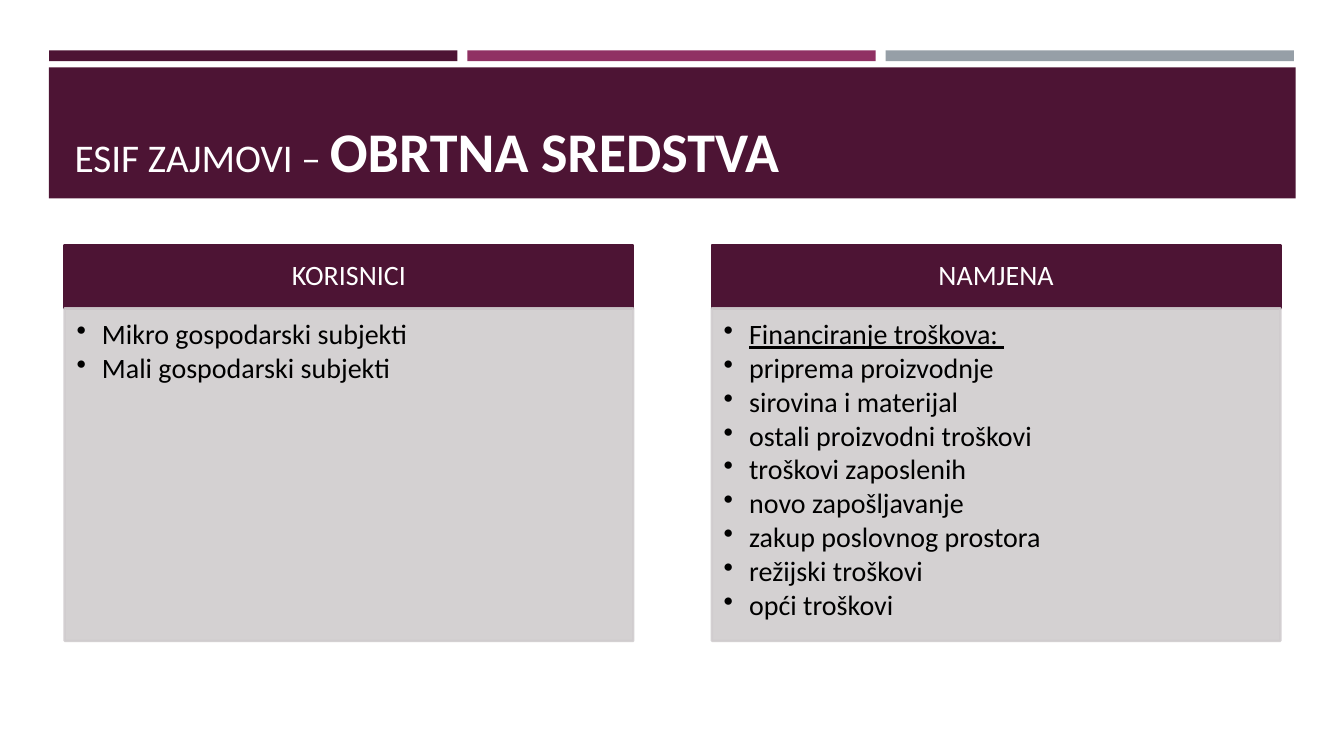
import pptx
import pptx.dml.color
import pptx.enum.shapes
import pptx.enum.text
import pptx.oxml.ns
import pptx.util
from lxml import etree

Cm = pptx.util.Cm
Pt = pptx.util.Pt
Anchor = pptx.enum.text.MSO_ANCHOR
Align = pptx.enum.text.PP_ALIGN

FONT = "Calibri"
COLORS = {
    "plum": "4D1434",
    "magenta": "903163",
    "steel": "969FA7",
    "panel": "D0CCCE",
    "white": "FFFFFF",
    "black": "000000",
}
COLUMNS = [
    ("KORISNICI", ["Mikro gospodarski subjekti", "Mali gospodarski subjekti"]),
    ("NAMJENA", [
        "Financiranje troškova: ",
        "priprema proizvodnje",
        "sirovina i materijal",
        "ostali proizvodni troškovi",
        "troškovi zaposlenih",
        "novo zapošljavanje",
        "zakup poslovnog prostora",
        "režijski troškovi",
        "opći troškovi",
    ]),
]
UNDERLINED = "Financiranje troškova: "


def color(name):
    return pptx.dml.color.RGBColor.from_string(COLORS[name])


def add_box(slide, left, top, width, height, fill, outlined=False):
    shape = slide.shapes.add_shape(
        pptx.enum.shapes.MSO_SHAPE.RECTANGLE, Cm(left), Cm(top), Cm(width), Cm(height))
    shape.shadow.inherit = False
    shape.fill.solid()
    shape.fill.fore_color.rgb = color(fill)
    if outlined:
        shape.line.color.rgb = color(fill)
        shape.line.width = Pt(1.75)
    else:
        shape.line.fill.background()
    return shape


def set_opacity(shape, percent):
    properties = shape.element.spPr
    for element in properties.iter(pptx.oxml.ns.qn("a:srgbClr")):
        alpha = etree.SubElement(element, pptx.oxml.ns.qn("a:alpha"))
        alpha.set("val", str(percent * 1000))


def set_frame(shape, anchor, left, top, right, bottom):
    frame = shape.text_frame
    frame.word_wrap = True
    frame.vertical_anchor = anchor
    frame.margin_left, frame.margin_top = Cm(left), Cm(top)
    frame.margin_right, frame.margin_bottom = Cm(right), Cm(bottom)
    return frame


def format_paragraph(paragraph, text_color, alignment):
    paragraph.alignment = alignment
    paragraph.line_spacing = 0.9
    paragraph.font.name = FONT
    paragraph.font.size = Pt(20)
    paragraph.font.color.rgb = color(text_color)


def add_bullet(paragraph):
    properties = paragraph._p.get_or_add_pPr()
    properties.set("marL", str(Cm(0.64)))
    properties.set("indent", str(-Cm(0.64)))
    bullet = etree.Element(pptx.oxml.ns.qn("a:buChar"))
    bullet.set("char", "•")
    properties.find(pptx.oxml.ns.qn("a:defRPr")).addprevious(bullet)


def add_column(slide, left, heading, items):
    header = add_box(slide, left, 6.17, 14.33, 1.6, "plum", outlined=True)
    frame = set_frame(header, Anchor.MIDDLE, 0.41, 0.23, 0.41, 0.23)
    frame.text = heading
    format_paragraph(frame.paragraphs[0], "white", Align.CENTER)

    panel = add_box(slide, left, 7.77, 14.33, 8.38, "panel", outlined=True)
    set_opacity(panel, 90)
    frame = set_frame(panel, Anchor.TOP, 0.3, 0.3, 0.41, 0.43)
    frame.text = "\n".join(items)
    for paragraph in frame.paragraphs:
        format_paragraph(paragraph, "black", Align.LEFT)
        paragraph.space_after = Pt(2.6)
        paragraph.font.underline = paragraph.text == UNDERLINED
        add_bullet(paragraph)


def add_title(slide):
    add_box(slide, 1.23, 1.7, 31.42, 3.3, "plum")
    title = slide.shapes.title
    title.element.getparent().append(title.element)
    title.left, title.top = Cm(1.63), Cm(1.96)
    title.width, title.height = Cm(30.63), Cm(2.82)
    frame = set_frame(title, Anchor.BOTTOM, 0.25, 0.13, 0.25, 0.13)
    frame.auto_size = pptx.enum.text.MSO_AUTO_SIZE.NONE
    paragraph = frame.paragraphs[0]
    paragraph.alignment = Align.LEFT
    paragraph.line_spacing = 0.9
    paragraph.font.name = FONT
    paragraph.font.color.rgb = color("white")
    for text, size, bold in [("ESIF ZAJMOVI – ", 28, False), ("OBRTNA SREDSTVA", 40, True)]:
        run = paragraph.add_run()
        run.text = text
        run.font.size = Pt(size)
        run.font.bold = bold


def main():
    presentation = pptx.Presentation()
    presentation.slide_width = Cm(33.87)
    presentation.slide_height = Cm(19.05)
    slide = presentation.slides.add_slide(presentation.slide_layouts.get_by_name("Title Only"))
    for index, name in enumerate(["plum", "magenta", "steel"]):
        add_box(slide, 1.24 + index * 10.54, 1.27, 10.29, 0.27, name)
    add_title(slide)
    for index, (heading, items) in enumerate(COLUMNS):
        add_column(slide, 1.63 + index * 16.31, heading, items)
    presentation.save("out.pptx")


if __name__ == "__main__":
    main()
